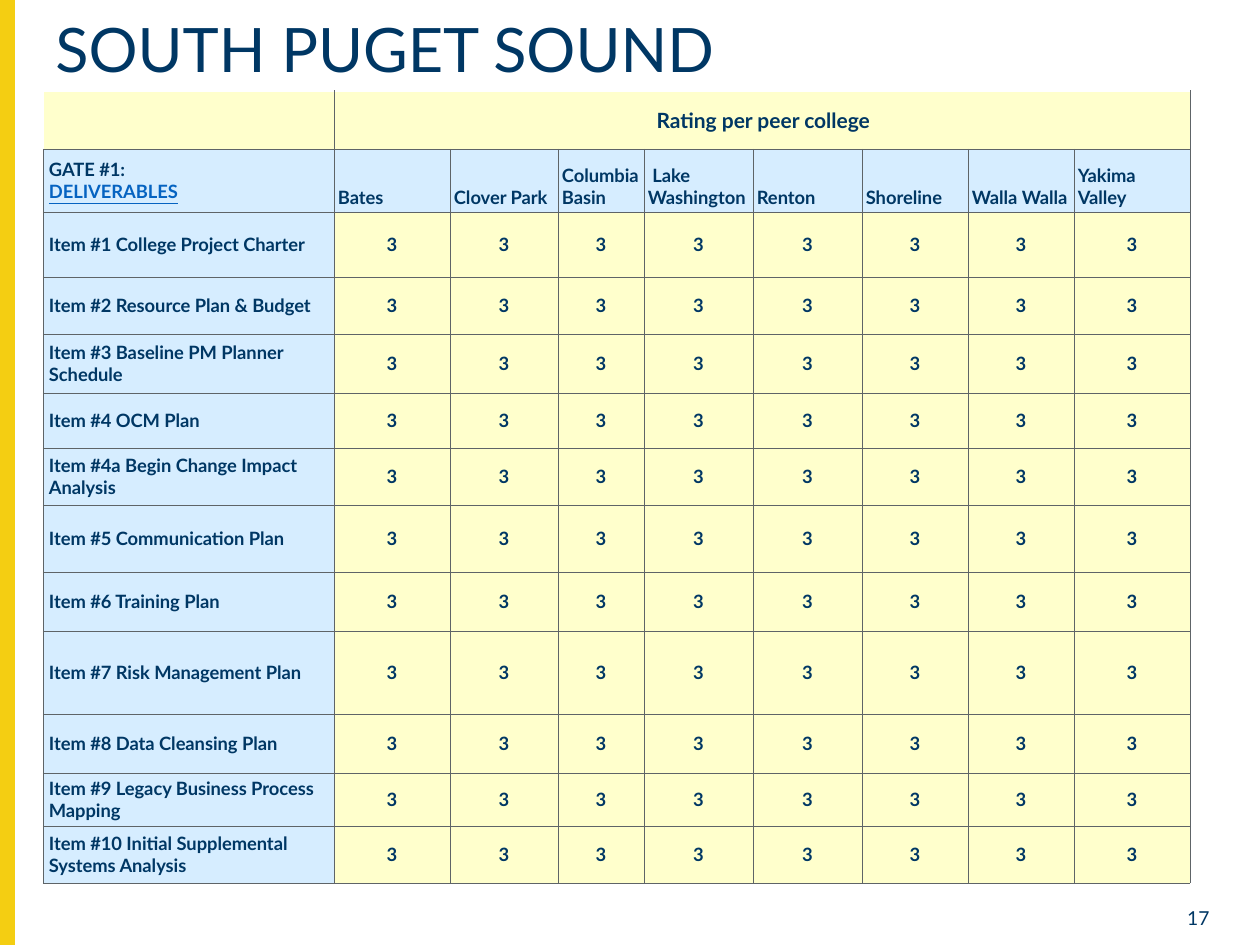
from lxml import etree
from pptx import Presentation
from pptx import util as u
from pptx.dml.color import RGBColor
from pptx.enum import shapes, text
from pptx.oxml.ns import qn

EMU_PER_PX = 914400 / 126
COLORS = {
    "navy": "003764", "link": "0563C1", "gold": "F4CE12", "cream": "FFFFCC",
    "sky": "D6EDFF", "grid": "5E6467", "white": "FFFFFF",
}
LEFT, CENTER, RIGHT = text.PP_ALIGN.LEFT, text.PP_ALIGN.CENTER, text.PP_ALIGN.RIGHT
TOP, MIDDLE, BOTTOM = text.MSO_ANCHOR.TOP, text.MSO_ANCHOR.MIDDLE, text.MSO_ANCHOR.BOTTOM

COLLEGES = ["Bates", "Clover Park", "Columbia Basin", " Lake Washington",
            "Renton", "Shoreline", "Walla Walla", "Yakima Valley"]
ITEMS = [
    "Item #1 College Project Charter",
    "Item #2 Resource Plan & Budget",
    "Item #3 Baseline PM Planner Schedule",
    "Item #4 OCM Plan",
    "Item #4a Begin Change Impact Analysis",
    "Item #5 Communication Plan",
    "Item #6 Training Plan",
    "Item #7 Risk Management Plan",
    "Item #8 Data Cleansing Plan",
    "Item #9 Legacy Business Process Mapping",
    "Item #10 Initial Supplemental Systems Analysis",
]
RATING = "3"
COLUMN_WIDTHS = [291, 116, 108, 86, 109, 109, 106, 106, 116]
ROW_HEIGHTS = [58, 63, 65, 57, 59, 55, 57, 67, 59, 83, 59, 53, 57]
LABEL_INSETS = (6, 0, 3, 0)
VALUE_INSETS = (4, 3, 4, 3)


def px(n):
    return u.Emu(round(n * EMU_PER_PX))


def rgb(name):
    return RGBColor.from_string(COLORS[name])


class Deck:
    """Holds the style and the current slide."""
    font = "Lato"

    def __init__(self, width, height):
        self.prs = Presentation()
        self.prs.slide_width, self.prs.slide_height = px(width), px(height)
        self.s = self.prs.slides.add_slide(self.prs.slide_layouts[6])

    def style(self, p, size, bold=False, align=LEFT):
        p.alignment = align
        for r in p.runs:
            r.font.name, r.font.size, r.font.bold = self.font, u.Pt(size), bold
            r.font.color.rgb = rgb("navy")

    def bar(self, x, y, w, h, color):
        sp = self.s.shapes.add_shape(shapes.MSO_SHAPE.RECTANGLE,
                                     px(x), px(y), px(w), px(h))
        sp.shadow.inherit = False
        sp.fill.solid()
        sp.fill.fore_color.rgb = rgb(color)
        sp.line.color.rgb = rgb(color)
        sp.line.width = u.Pt(1)

    def label(self, x, y, w, h, words, size, align=LEFT, anchor=TOP, inset=6):
        tf = self.s.shapes.add_textbox(px(x), px(y), px(w), px(h)).text_frame
        tf.word_wrap = True
        tf.vertical_anchor = anchor
        tf.margin_top = tf.margin_bottom = px(inset)
        tf.text = words
        self.style(tf.paragraphs[0], size, align=align)
        return tf.paragraphs[0]

    def table(self, x, y, widths, heights):
        frame = self.s.shapes.add_table(len(heights), len(widths), px(x), px(y),
                                        px(sum(widths)), px(sum(heights)))
        table = frame.table
        table.first_row = table.horz_banding = False
        for column, width in zip(table.columns, widths):
            column.width = px(width)
        for row, height in zip(table.rows, heights):
            row.height = px(height)
        return table

    def borders(self, cell, white_sides):
        tc_pr = cell._tc.get_or_add_tcPr()
        for side in "LRTB":
            color, width = ("white", 1) if side in white_sides else ("grid", 0.25)
            ln = etree.SubElement(tc_pr, qn(f"a:ln{side}"), w=str(u.Pt(width)))
            fill = etree.SubElement(ln, qn("a:solidFill"))
            etree.SubElement(fill, qn("a:srgbClr"), val=COLORS[color])

    def cell(self, cell, words, fill, insets, size=10.5, align=LEFT,
             anchor=MIDDLE, white_sides=""):
        self.borders(cell, white_sides)
        cell.fill.solid()
        cell.fill.fore_color.rgb = rgb(fill)
        (cell.margin_left, cell.margin_top,
         cell.margin_right, cell.margin_bottom) = map(px, insets)
        cell.vertical_anchor = anchor
        cell.text_frame.text = words
        for p in cell.text_frame.paragraphs:
            self.style(p, size, True, align)


def main():
    deck = Deck(1260, 945)

    # Side bar, page number and title
    deck.bar(0, 0, 14, 945, "gold")
    deck.label(1159, 900, 63, 26, "17", 11, align=RIGHT)
    title = deck.label(43, 13, 1128, 73, "SOUTH PUGET SOUND", 35,
                       anchor=BOTTOM, inset=0)
    title.line_spacing = 0.9

    # Heading row of the ratings table
    table = deck.table(43, 91, COLUMN_WIDTHS, ROW_HEIGHTS)
    last = len(COLLEGES)
    table.cell(0, 1).merge(table.cell(0, last))
    deck.cell(table.cell(0, 0), "", "cream", LABEL_INSETS, white_sides="LT")
    for col in range(1, last + 1):
        deck.cell(table.cell(0, col), "Rating per peer college" if col == 1 else "",
                  "cream", LABEL_INSETS, size=12, align=CENTER, white_sides="T")

    # College names
    gate = table.cell(1, 0)
    deck.cell(gate, "GATE #1:\nDELIVERABLES", "sky", LABEL_INSETS)
    link = gate.text_frame.paragraphs[1].runs[0]
    link.font.underline = True
    link.font.color.rgb = rgb("link")
    for col, college in enumerate(COLLEGES, 1):
        deck.cell(table.cell(1, col), college, "sky", VALUE_INSETS, anchor=BOTTOM)

    # Deliverables and their ratings
    for row, item in enumerate(ITEMS, 2):
        deck.cell(table.cell(row, 0), item, "sky", LABEL_INSETS)
        for col in range(1, last + 1):
            deck.cell(table.cell(row, col), RATING, "cream", VALUE_INSETS, align=CENTER)

    deck.prs.save("out.pptx")


if __name__ == "__main__":
    main()
